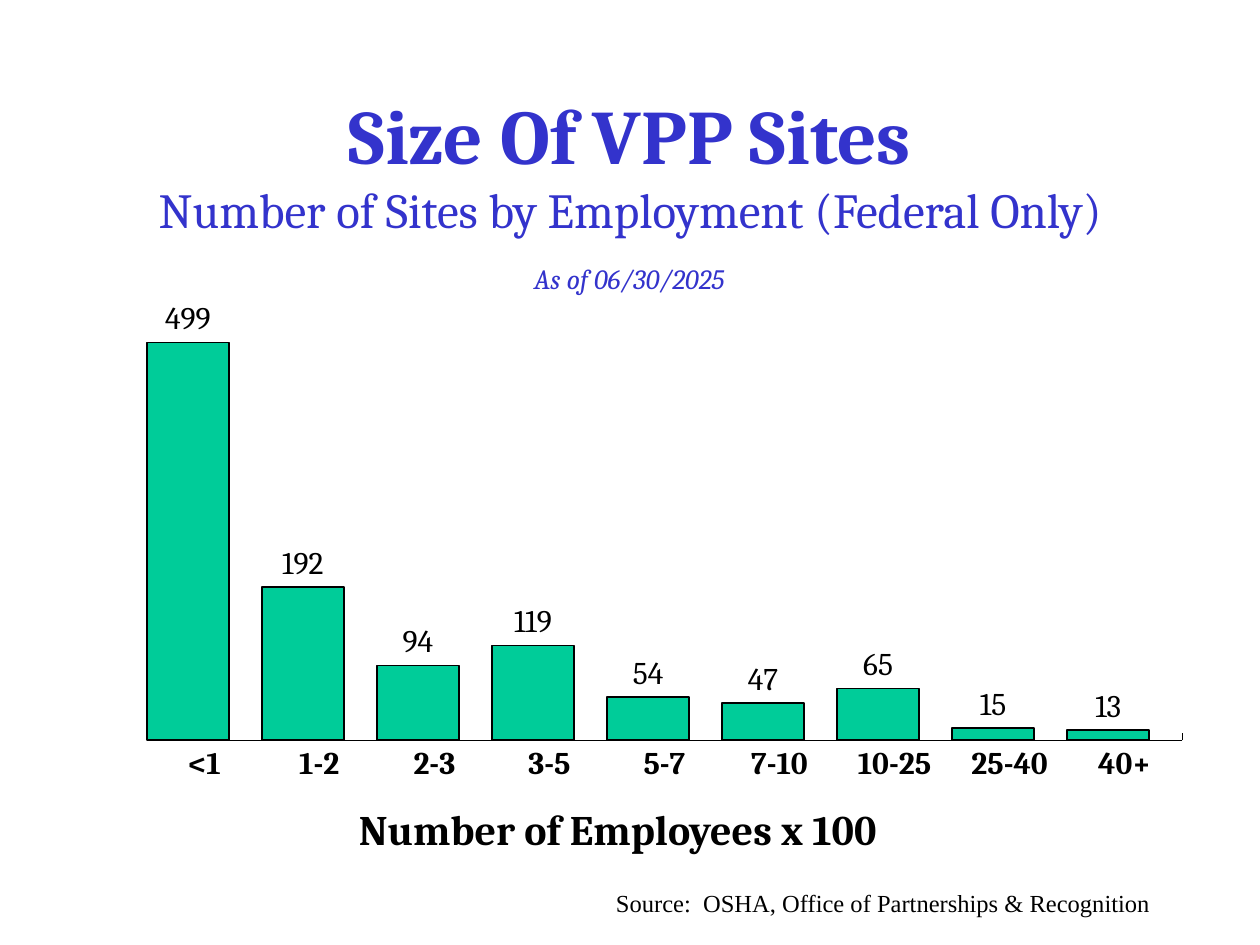
from lxml import etree
from pptx import Presentation
from pptx.chart.data import CategoryChartData
from pptx.dml.color import RGBColor
from pptx.enum import chart as ch, text
from pptx.oxml.ns import qn
from pptx.util import Inches, Pt

BLUE, BLACK = "3333CC", "000000"


def rgb(value):
    return RGBColor.from_string(value)


def style(font, size, color, bold=False, italic=False, name="Cambria"):
    font.name, font.size = name, Pt(size)
    font.bold, font.italic = bold, italic
    font.color.rgb = rgb(color)


prs = Presentation()
prs.slide_width, prs.slide_height = Inches(10), Inches(7.5)
s = prs.slides.add_slide(prs.slide_layouts[5])

# Column chart: the empty series share each category and set the bar width
data = CategoryChartData()
data.categories = ["<1", "1-2", "2-3", "3-5", "5-7", "7-10", "10-25", "25-40", "40+"]
data.add_series("Series 1", [499, 192, 94, 119, 54, 47, 65, 15, 13])
for name in ("Series 2", "Series 3"):
    data.add_series(name, [None] * 9)
chart = s.shapes.add_chart(
    ch.XL_CHART_TYPE.COLUMN_CLUSTERED,
    Inches(0.98), Inches(2.08), Inches(8.42), Inches(4.31), data,
).chart
chart.has_legend = False
chart.has_title = False
style(chart.font, 18, BLACK, bold=True)

plot = chart.plots[0]
plot.vary_by_categories = False
plot.overlap, plot.gap_width = 80, 0
for series, color in zip(plot.series, ("00CC99", BLUE, "CCCCFF")):
    series.format.fill.solid()
    series.format.fill.fore_color.rgb = rgb(color)
    series.format.line.color.rgb = rgb(BLACK)
    series.format.line.width = Pt(1)
labels = plot.series[0].data_labels
labels.show_value = True
labels.position = ch.XL_LABEL_POSITION.OUTSIDE_END
style(labels.font, 18, BLACK)

axis = chart.category_axis
axis.major_tick_mark = ch.XL_TICK_MARK.INSIDE
axis.format.line.color.rgb = rgb(BLACK)
axis.format.line.width = Pt(0.25)
axis = chart.value_axis
axis.minimum_scale, axis.maximum_scale = 0, 600
axis.has_major_gridlines = False
axis.major_tick_mark = ch.XL_TICK_MARK.NONE
axis.tick_label_position = ch.XL_TICK_LABEL_POSITION.NONE
axis.format.line.fill.background()

# Fixed inner plot area, as fractions of the chart
area = chart.plots[0]._element.getparent()
for old in area.findall(qn("c:layout")):
    area.remove(old)
layout = etree.Element(qn("c:layout"))
area.insert(0, layout)
manual = etree.SubElement(layout, qn("c:manualLayout"))
for tag, val in [("layoutTarget", "inner"), ("xMode", "edge"), ("yMode", "edge"),
                 ("x", "0.022"), ("y", "0"), ("w", "0.976"), ("h", "0.881")]:
    etree.SubElement(manual, qn("c:" + tag)).set("val", val)

# Title with subtitle on its second line
title = s.shapes.title
title.left, title.top = Inches(0.75), Inches(0.67)
title.width, title.height = Inches(8.5), Inches(1.25)
tf = title.text_frame
tf.auto_size = text.MSO_AUTO_SIZE.NONE
tf.vertical_anchor = text.MSO_ANCHOR.MIDDLE
p = tf.paragraphs[0]
p.alignment = text.PP_ALIGN.CENTER
r = p.add_run()
r.text = "Size Of VPP Sites"
style(r.font, 44, BLUE, bold=True)
p.add_line_break()
r = p.add_run()
r.text = "Number of Sites by Employment (Federal Only)"
style(r.font, 28, BLUE)

# Date, axis caption and source
LEFT, CENTER = text.PP_ALIGN.LEFT, text.PP_ALIGN.CENTER
TOP, MIDDLE = text.MSO_ANCHOR.TOP, text.MSO_ANCHOR.MIDDLE
notes = [
    ("As of 06/30/2025", (3.58, 1.83, 2.83, 0.75), CENTER, MIDDLE, True,
     dict(size=16, color=BLUE, italic=True)),
    ("Number of Employees x 100", (2.75, 6.33, 4.6, 0.5), LEFT, TOP, False,
     dict(size=24, color=BLACK, bold=True)),
    ("Source:  OSHA, Office of Partnerships & Recognition", (4.79, 7, 5.12, 0.33), LEFT, TOP, True,
     dict(size=14, color=BLACK, name="Times New Roman")),
]
for words, box, align, anchor, wrap, look in notes:
    tf = s.shapes.add_textbox(*map(Inches, box)).text_frame
    tf.word_wrap = wrap
    tf.vertical_anchor = anchor
    p = tf.paragraphs[0]
    p.alignment = align
    r = p.add_run()
    r.text = words
    style(r.font, **look)

prs.save("out.pptx")
